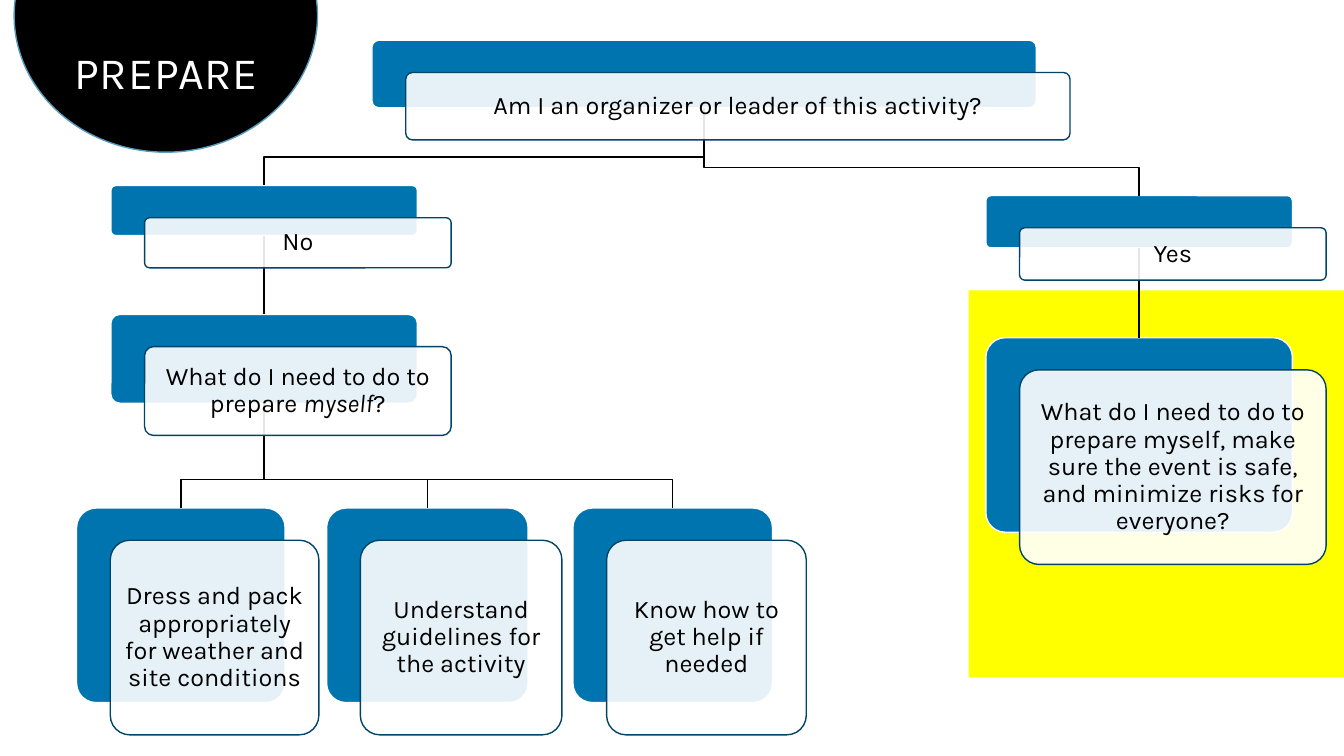
from pptx import Presentation
from pptx.dml.color import RGBColor
from pptx.enum import shapes, text
from pptx.oxml.ns import qn
from pptx.util import Pt
from lxml import etree

BLUE, NAVY, WHITE, BLACK = "0074AF", "004568", "FFFFFF", "000000"
SHIFT = (24.1, 23)  # offset of each front card from its back card
DROP = 20.2  # height of an elbow's last leg
KID_TOP, TALL, WIDE = 362.9, 139, 219

# name: left, top, width, height, runs of (words, italic)
CARDS = {
    "ask": (265.7, 28.8, 474.5, 48.2,
            [("Am I an organizer or leader of this activity?", False)]),
    "no": (79.2, 132.5, WIDE, 35.8, [("No", False)]),
    "self": (79.2, 224.6, WIDE, 63.4,
             [("What do I need to do to prepare ", False),
              ("myself", True), ("?", False)]),
    "dress": (54.7, KID_TOP, 149, TALL,
              [("Dress and pack appropriately for weather and site conditions",
                False)]),
    "guide": (233.3, KID_TOP, 144, TALL,
              [("Understand guidelines for the activity", False)]),
    "help": (409.2, KID_TOP, 142.6, TALL,
             [("Know how to get help if needed", False)]),
    "yes": (704.2, 139.7, WIDE, 37.4, [("Yes", False)]),
    "all": (704.2, 241.2, WIDE, TALL,
            [("What do I need to do to prepare myself, make sure the event "
              "is safe, and minimize risks for everyone?", False)]),
}
STRAIGHT = [("yes", "all"), ("no", "self")]
ELBOWS = [("ask", "yes"), ("self", "help"), ("self", "guide"),
          ("self", "dress"), ("ask", "no")]


def color(code):
    return RGBColor.from_string(code)


class Chart:
    """Draws the parts of the decision tree on one slide."""

    font = "Karla"

    def __init__(self, slide):
        self.shapes = slide.shapes

    def box(self, kind, left, top, width, height, fill, line=None, alpha=None):
        shape = self.shapes.add_shape(
            kind, Pt(left), Pt(top), Pt(width), Pt(height))
        shape.shadow.inherit = False
        shape.fill.solid()
        shape.fill.fore_color.rgb = color(fill)
        if alpha:
            tint = shape.element.spPr.find(qn("a:solidFill"))[0]
            etree.SubElement(tint, qn("a:alpha"), val=str(alpha * 1000))
        if line:
            shape.line.color.rgb = color(line)
            shape.line.width = Pt(1)
        else:
            shape.line.fill.background()
        return shape

    def card(self, left, top, width, height, fill, line, alpha=None):
        shape = self.box(shapes.MSO_SHAPE.ROUNDED_RECTANGLE,
                         left, top, width, height, fill, line, alpha)
        shape.adjustments[0] = 0.1
        return shape

    def label(self, shape, runs, size, tone, insets, anchor):
        frame = shape.text_frame
        frame.word_wrap = True
        frame.auto_size = text.MSO_AUTO_SIZE.NONE
        frame.vertical_anchor = anchor
        (frame.margin_left, frame.margin_top,
         frame.margin_right, frame.margin_bottom) = map(Pt, insets)
        para = frame.paragraphs[0]
        para.alignment = text.PP_ALIGN.CENTER
        para.line_spacing = 0.9
        for words, slant in runs:
            run = para.add_run()
            run.text = words
            if slant:
                run.font.italic = True
        para.font.name = self.font
        para.font.size = Pt(size)
        para.font.color.rgb = color(tone)
        return para

    def ink(self, line):
        line.color.rgb = color(BLACK)
        line.width = Pt(1)

    def link(self, start, end):
        wire = self.shapes.add_connector(
            shapes.MSO_CONNECTOR.STRAIGHT, 0, 0, 0, 0)
        wire.begin_connect(start, 2)
        wire.end_connect(end, 0)
        self.ink(wire.line)
        etree.SubElement(wire.element.spPr, qn("a:effectLst"))

    def elbow(self, start, end):
        """Run down from start, across, and down again to end."""
        x, far = (s.left + s.width // 2 for s in (start, end))
        bend = end.top - Pt(DROP)
        pen = self.shapes.build_freeform(x, start.top + start.height)
        pen.add_line_segments([(x, bend), (far, bend), (far, end.top)],
                              close=False)
        wire = pen.convert_to_shape()
        wire.shadow.inherit = False
        wire.fill.background()
        self.ink(wire.line)

    def title(self, words, left, top, width, height):
        head = self.shapes.title
        head.left, head.top, head.width, head.height = map(
            Pt, (left, top, width, height))
        para = self.label(head, [(words, False)], 32, WHITE,
                          (11.5, 33.1, 11.5, 3.6), text.MSO_ANCHOR.TOP)
        para.runs[0]._r.get_or_add_rPr().set("spc", "60")
        self.shapes.element.append(head.element)  # bring to front


def main():
    deck = Presentation()
    deck.slide_width, deck.slide_height = Pt(960), Pt(540)
    chart = Chart(deck.slides.add_slide(deck.slide_layouts[5]))

    chart.box(shapes.MSO_SHAPE.RECTANGLE, 691.9, 207.4, 268.1, 276.5, "FFFF00")
    backs = {name: chart.card(*spot, BLUE, WHITE)
             for name, (*spot, _) in CARDS.items()}
    for start, end in STRAIGHT:
        chart.link(backs[start], backs[end])
    for start, end in ELBOWS:
        chart.elbow(backs[start], backs[end])
    for left, top, width, height, runs in CARDS.values():
        front = chart.card(left + SHIFT[0], top + SHIFT[1], width, height,
                           WHITE, NAVY, 90)
        chart.label(front, runs, 18, BLACK, [5.4] * 4, text.MSO_ANCHOR.MIDDLE)

    chart.box(shapes.MSO_SHAPE.OVAL, 10.1, -86.4, 216.7, 195.1, BLACK, "579BBD")
    chart.title("PREPARE", 25.2, 2.9, 187.2, 72)
    deck.save("out.pptx")


if __name__ == "__main__":
    main()
